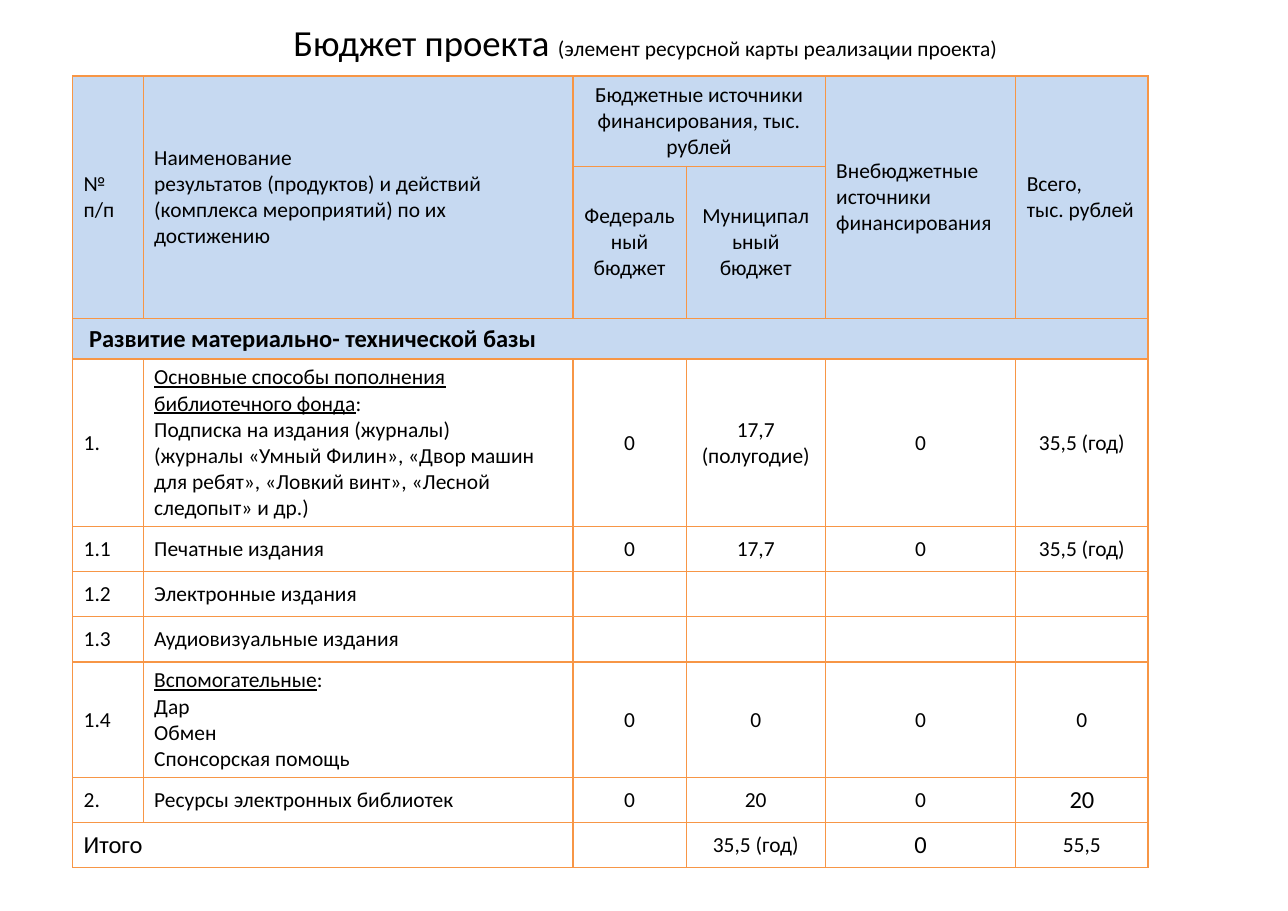
from lxml import etree
from pptx import Presentation
from pptx import util as u
from pptx.dml.color import RGBColor
from pptx.enum import text
from pptx.oxml import ns

SCALE = 9144
FONT = "Calibri"
BLACK, ORANGE, PALE_BLUE = "000000", "F79646", "C6D9F1"

COLUMNS = [64, 390, 103, 126, 173, 120]
HEIGHTS = [82, 138, 37, 152, 41, 41, 41, 105, 41, 41]
MERGES = [(0, 0, 1, 0), (0, 1, 1, 1), (0, 2, 0, 3), (0, 4, 1, 4),
          (0, 5, 1, 5), (2, 0, 2, 5), (9, 0, 9, 1)]
HEADER_ROWS = 3
LARGE_CELLS = {(2, 0), (8, 5), (9, 0), (9, 4)}
BUDGET = [
    ["№\nп/п",
     "Наименование\nрезультатов (продуктов) и действий (комплекса мероприятий) по их достижению",
     "Бюджетные источники финансирования, тыс. рублей", "",
     "Внебюджетные\nисточники\nфинансирования", "Всего,\nтыс. рублей"],
    ["", "", "Федеральный бюджет", "Муниципальный бюджет", "", ""],
    [" Развитие материально- технической базы", "", "", "", "", ""],
    ["1.",
     "_Основные способы пополнения библиотечного фонда_:\nПодписка на издания (журналы)\n"
     "(журналы «Умный Филин», «Двор машин для ребят», «Ловкий винт», «Лесной следопыт» и др.)",
     "0", "17,7 (полугодие)", "0", "35,5 (год)"],
    ["1.1", "Печатные издания", "0", "17,7", "0", "35,5 (год)"],
    ["1.2", "Электронные издания", "", "", "", ""],
    ["1.3", "Аудиовизуальные издания", "", "", "", ""],
    ["1.4", "_Вспомогательные_:\nДар\nОбмен\nСпонсорская помощь", "0", "0", "0", "0"],
    ["2.", "Ресурсы электронных библиотек", "0", "20", "0", "20"],
    ["Итого", "", "", "35,5 (год)", "0", "55,5"],
]


def px(length):
    return u.Emu(length * SCALE)


def color(value):
    return RGBColor.from_string(value)


class Page:
    def __init__(self, deck):
        self.page = deck.slides.add_slide(deck.slide_layouts[6])

    def style(self, font, size=None, bold=None):
        font.name = FONT
        font.color.rgb = color(BLACK)
        if size:
            font.size = u.Pt(size)
        font.bold = bold

    def title(self, left, top, width, height, spans):
        box = self.page.shapes.add_textbox(px(left), px(top), px(width), px(height))
        frame = box.text_frame
        frame.word_wrap = True
        frame.vertical_anchor = text.MSO_ANCHOR.MIDDLE
        frame.margin_left = frame.margin_right = px(11)
        frame.margin_top = frame.margin_bottom = px(6)
        para = frame.paragraphs[0]
        para.alignment = text.PP_ALIGN.CENTER
        para.line_spacing = 0.85
        self.style(para.font)
        for words, size in spans:
            span = para.add_run()
            span.text = words
            span.font.size = u.Pt(size)

    def borders(self, cell):
        properties = cell._tc.get_or_add_tcPr()
        for position, side in enumerate(("lnL", "lnR", "lnT", "lnB")):
            line = etree.Element(ns.qn(f"a:{side}"), w=str(u.Pt(1)))
            fill = etree.SubElement(line, ns.qn("a:solidFill"))
            etree.SubElement(fill, ns.qn("a:srgbClr"), val=ORANGE)
            properties.insert(position, line)

    def fill_cell(self, cell, words, fill, size, bold, centered):
        cell.vertical_anchor = text.MSO_ANCHOR.MIDDLE
        if fill:
            cell.fill.solid()
            cell.fill.fore_color.rgb = color(fill)
        else:
            cell.fill.background()
        self.borders(cell)
        frame = cell.text_frame
        for number, line in enumerate(words.split("\n")):
            para = frame.add_paragraph() if number else frame.paragraphs[0]
            para.alignment = text.PP_ALIGN.CENTER if centered else text.PP_ALIGN.LEFT
            self.style(para.font, size, bold)
            for part, piece in enumerate(line.split("_")):
                if piece:
                    span = para.add_run()
                    span.text = piece
                    if part % 2:
                        span.font.underline = True

    def budget_table(self, left, top):
        frame = self.page.shapes.add_table(len(HEIGHTS), len(COLUMNS), px(left), px(top),
                                           px(sum(COLUMNS)), px(sum(HEIGHTS)))
        table = frame.table
        table.first_row = table.horz_banding = False
        for column, width in zip(table.columns, COLUMNS):
            column.width = px(width)
        for row, height in zip(table.rows, HEIGHTS):
            row.height = px(height)
        for first_row, first_column, last_row, last_column in MERGES:
            table.cell(first_row, first_column).merge(table.cell(last_row, last_column))
        for row, values in enumerate(BUDGET):
            for column, words in enumerate(values):
                self.fill_cell(
                    table.cell(row, column), words,
                    fill=PALE_BLUE if row < HEADER_ROWS else None,
                    size=16 if (row, column) in LARGE_CELLS else 14,
                    bold=row == HEADER_ROWS - 1,
                    centered=column in (2, 3) or (column > 3 and row >= HEADER_ROWS))


def main():
    deck = Presentation()
    deck.slide_width, deck.slide_height = px(1169), px(827)
    page = Page(deck)
    page.title(66, 18, 1040, 47, [("Бюджет проекта ", 24),
                                  ("(элемент ресурсной карты реализации проекта)", 14)])
    page.budget_table(66, 69)
    deck.save("out.pptx")


if __name__ == "__main__":
    main()
